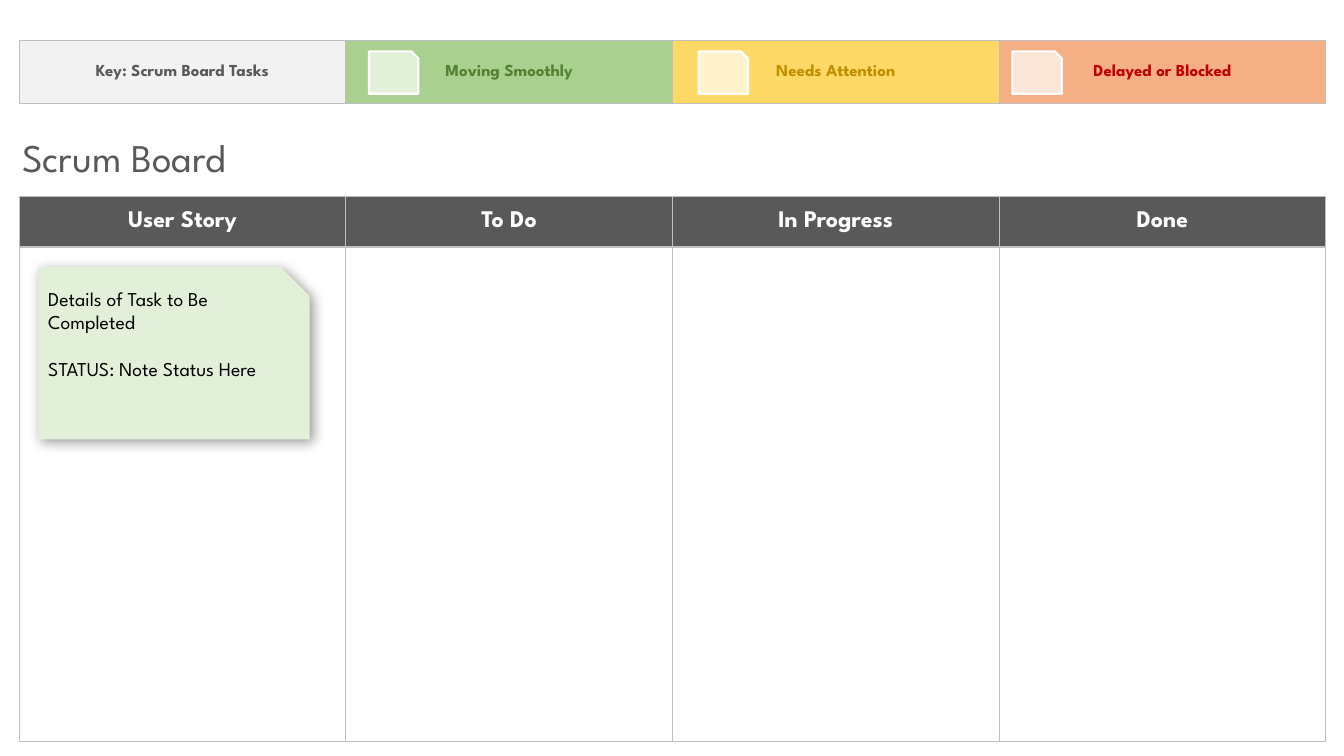
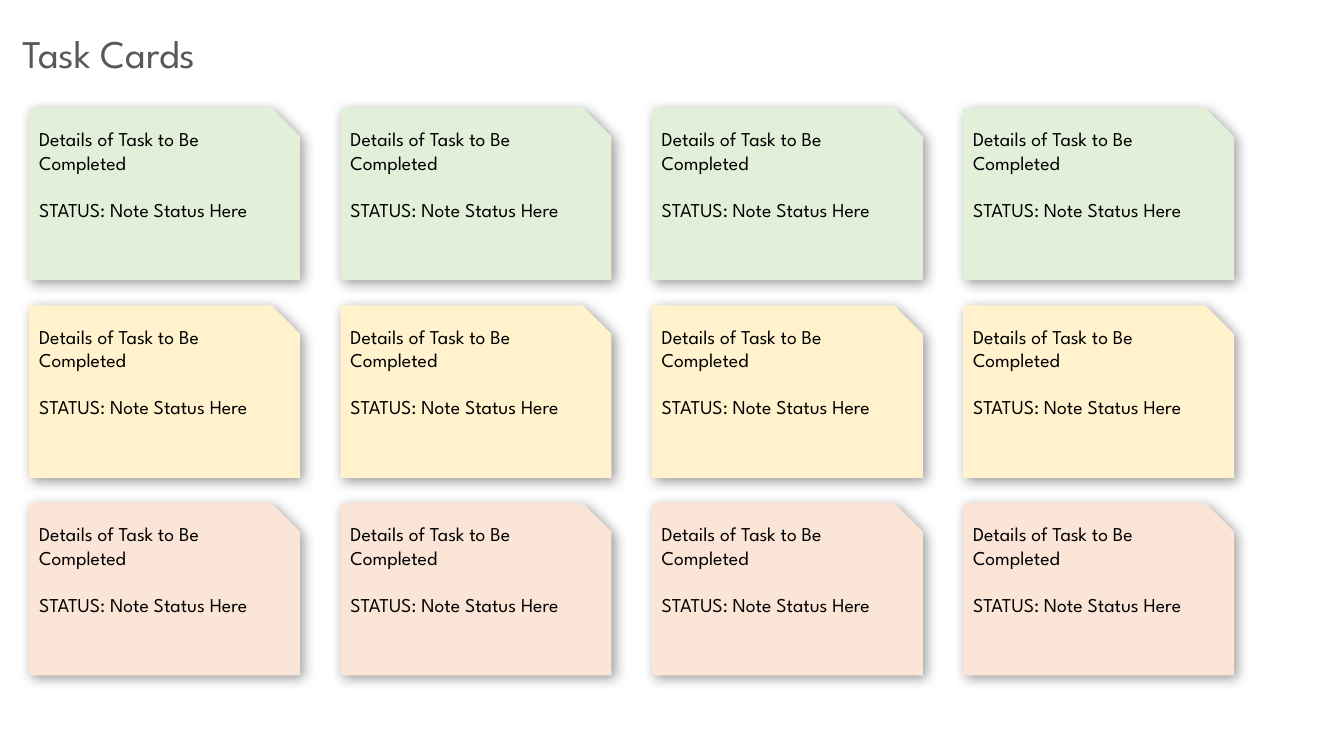
from dataclasses import dataclass

from lxml import etree
from pptx import Presentation
from pptx import util as u
from pptx.dml.color import RGBColor
from pptx.enum import shapes, text
from pptx.oxml import ns


@dataclass(frozen=True)
class Theme:
    font: str = "League Spartan"
    title_size: int = 28
    header_size: int = 17
    card_size: int = 14
    key_size: int = 12
    card_gap: float = 16.8
    ink: str = "595959"
    black: str = "000000"
    paper: str = "FFFFFF"
    grid: str = "BFBFBF"
    key_fill: str = "F2F2F2"


@dataclass(frozen=True)
class Status:
    label: str
    band: str
    ink: str
    card: str
    chip_offset: float


@dataclass(frozen=True)
class Box:
    left: float
    top: float
    width: float
    height: float

    def emu(self):
        return [u.Inches(n) for n in (self.left, self.top, self.width, self.height)]

    def inner(self, left, top, width, height):
        return Box(self.left + left, self.top + top, width, height)

    def cell(self, column, row, columns, rows, gap_x=0, gap_y=0):
        width = (self.width - gap_x * (columns - 1)) / columns
        height = (self.height - gap_y * (rows - 1)) / rows
        return self.inner(column * (width + gap_x), row * (height + gap_y), width, height)


THEME = Theme()
STATUSES = [
    Status("Moving Smoothly", "A9D08E", "548235", "E2F0D9", 0.23),
    Status("Needs Attention", "FFD966", "BF8F00", "FFF2CC", 0.26),
    Status("Delayed or Blocked", "F4B084", "C00000", "FBE5D6", 0.13),
]
STAGES = ["User Story", "To Do", "In Progress", "Done"]
COLUMNS = len(STAGES)
HEADER_HEIGHT = 0.5
CARD_WIDTH, CARD_HEIGHT = 2.69, 1.71
CARD_LINES = ["Details of Task to Be Completed", "STATUS: Note Status Here"]


def color(value):
    return RGBColor.from_string(value)


def add_run(para, words, size, ink, bold=False):
    span = para.add_run()
    span.text = words
    span.font.name = THEME.font
    span.font.size = u.Pt(size)
    span.font.bold = bold
    span.font.color.rgb = color(ink)


def add_title(page, words, box):
    title = page.shapes.title
    title.left, title.top, title.width, title.height = box.emu()
    frame = title.text_frame
    frame.word_wrap = True
    frame.auto_size = text.MSO_AUTO_SIZE.SHAPE_TO_FIT_TEXT
    frame.vertical_anchor = text.MSO_ANCHOR.TOP
    para = frame.paragraphs[0]
    para.alignment = text.PP_ALIGN.LEFT
    add_run(para, words, THEME.title_size, THEME.ink)


def add_borders(cell):
    properties = cell._tc.get_or_add_tcPr()
    for side in ("lnL", "lnR", "lnT", "lnB"):
        line = etree.SubElement(properties, ns.qn(f"a:{side}"), w=str(u.Pt(1)))
        fill = etree.SubElement(line, ns.qn("a:solidFill"))
        etree.SubElement(fill, ns.qn("a:srgbClr"), val=THEME.grid)


def add_grid(page, box, row_heights):
    """Add a bordered white table with equal columns."""
    table = page.shapes.add_table(len(row_heights), COLUMNS, *box.emu()).table
    table.first_row = table.horz_banding = False
    for column in table.columns:
        column.width = u.Inches(box.width / COLUMNS)
    for row, height in zip(table.rows, row_heights):
        row.height = u.Inches(height)
    for cell in table.iter_cells():
        add_borders(cell)
        fill_cell(cell, THEME.paper)
    return table


def fill_cell(cell, fill):
    cell.fill.solid()
    cell.fill.fore_color.rgb = color(fill)


def label_cell(cell, words, size, ink, fill):
    fill_cell(cell, fill)
    cell.margin_left = cell.margin_right = cell.margin_top = cell.margin_bottom = 0
    cell.vertical_anchor = text.MSO_ANCHOR.MIDDLE
    para = cell.text_frame.paragraphs[0]
    para.alignment = text.PP_ALIGN.CENTER
    add_run(para, words, size, ink, bold=True)


def add_note(page, box, fill):
    """Add a sheet with a snipped corner and no outline, shadow or text."""
    note = page.shapes.add_shape(shapes.MSO_SHAPE.SNIP_1_RECTANGLE, *box.emu())
    note.fill.solid()
    note.fill.fore_color.rgb = color(fill)
    note.line.fill.background()
    note.shadow.inherit = False
    return note


def add_shadow(shape):
    effects = shape._element.spPr.find(ns.qn("a:effectLst"))
    shadow = etree.SubElement(effects, ns.qn("a:outerShdw"), blurRad=str(u.Pt(9)),
                              dist=str(u.Pt(3)), dir=str(45 * 60000),
                              algn="tl", rotWithShape="0")
    tint = etree.SubElement(shadow, ns.qn("a:srgbClr"), val=THEME.black)
    etree.SubElement(tint, ns.qn("a:alpha"), val="40000")


def add_card(page, box, status):
    card = add_note(page, box, status.card)
    add_shadow(card)
    frame = card.text_frame
    frame.word_wrap = True
    frame.vertical_anchor = text.MSO_ANCHOR.TOP
    for index, words in enumerate(CARD_LINES):
        para = frame.add_paragraph() if index else frame.paragraphs[0]
        para.alignment = text.PP_ALIGN.LEFT
        para.space_before = u.Pt(THEME.card_gap if index else 0)
        add_run(para, words, THEME.card_size, THEME.black)


def add_key(page, box):
    table = add_grid(page, box, [box.height])
    label_cell(table.cell(0, 0), "Key: Scrum Board Tasks",
               THEME.key_size, THEME.ink, THEME.key_fill)
    for column, status in enumerate(STATUSES, start=1):
        label_cell(table.cell(0, column), status.label,
                   THEME.key_size, status.ink, status.band)
        area = box.cell(column, 0, COLUMNS, 1)
        chip = add_note(page, area.inner(status.chip_offset, 0.11, 0.49, 0.42), status.card)
        chip.line.color.rgb = color(THEME.paper)
        chip.line.width = u.Pt(1.5)


def add_board(page, box):
    table = add_grid(page, box, [HEADER_HEIGHT, box.height - HEADER_HEIGHT])
    for column, stage in enumerate(STAGES):
        label_cell(table.cell(0, column), stage,
                   THEME.header_size, THEME.paper, THEME.ink)
    add_card(page, box.inner(0.19, HEADER_HEIGHT + 0.2, CARD_WIDTH, CARD_HEIGHT), STATUSES[0])


def add_card_wall(page, box):
    rows = len(STATUSES)
    for row, status in enumerate(STATUSES):
        for column in range(COLUMNS):
            add_card(page, box.cell(column, row, COLUMNS, rows, 0.4, 0.25), status)


def main():
    deck = Presentation()
    deck.slide_width, deck.slide_height = u.Inches(13.33), u.Inches(7.5)
    title_only = deck.slide_layouts[5]

    board_page = deck.slides.add_slide(title_only)
    add_key(board_page, Box(0.19, 0.4, 12.96, 0.63))
    add_title(board_page, "Scrum Board", Box(0.12, 1.27, 8.08, 0.57))
    add_board(board_page, Box(0.19, 1.95, 12.96, 5.41))

    cards_page = deck.slides.add_slide(title_only)
    add_title(cards_page, "Task Cards", Box(0.12, 0.24, 8.08, 0.57))
    add_card_wall(cards_page, Box(0.29, 1.07, 11.95, 5.63))

    deck.save("out.pptx")


if __name__ == "__main__":
    main()
